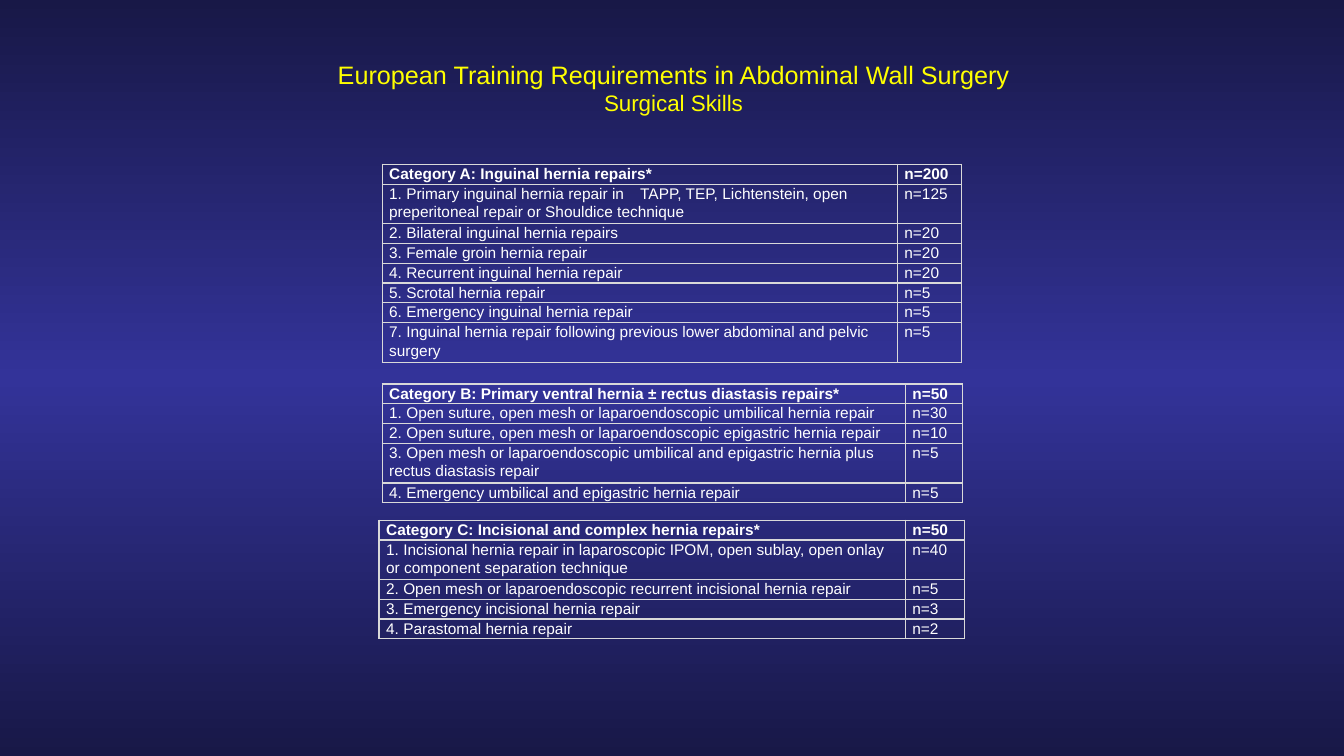
from copy import deepcopy

from lxml import etree
from pptx import Presentation
from pptx import util as u
from pptx.dml.color import RGBColor
from pptx.enum import text
from pptx.oxml import ns

NAVY = RGBColor(0x18, 0x18, 0x47)
INDIGO = RGBColor(0x33, 0x33, 0x99)
YELLOW = RGBColor(0xFF, 0xFF, 0x00)
WHITE = RGBColor(0xFF, 0xFF, 0xFF)
BORDER = RGBColor(0xD9, 0xD9, 0xD9)

FONT = "Arial"
WIDTH, HEIGHT = u.Inches(13.33), u.Inches(7.5)
COL, ROW = WIDTH / 133.3, HEIGHT / 75
LINE_ROWS = 1.95
TECHNIQUE_TAB = 24.9

INGUINAL = [
    ("Category A: Inguinal hernia repairs*", "n=200"),
    ("1. Primary inguinal hernia repair in\tTAPP, TEP, Lichtenstein, open "
     "preperitoneal repair or Shouldice technique", "n=125"),
    ("2. Bilateral inguinal hernia repairs", "n=20"),
    ("3. Female groin hernia repair", "n=20"),
    ("4. Recurrent inguinal hernia repair", "n=20"),
    ("5. Scrotal hernia repair", "n=5"),
    ("6. Emergency inguinal hernia repair", "n=5"),
    ("7. Inguinal hernia repair following previous lower abdominal and pelvic surgery", "n=5"),
]
VENTRAL = [
    ("Category B: Primary ventral hernia ± rectus diastasis repairs*", "n=50"),
    ("1. Open suture, open mesh or laparoendoscopic umbilical hernia repair", "n=30"),
    ("2. Open suture, open mesh or laparoendoscopic epigastric hernia repair", "n=10"),
    ("3. Open mesh or laparoendoscopic umbilical and epigastric hernia plus "
     "rectus diastasis repair", "n=5"),
    ("4. Emergency umbilical and epigastric hernia repair", "n=5"),
]
INCISIONAL = [
    ("Category C: Incisional and complex hernia repairs*", "n=50"),
    ("1. Incisional hernia repair in laparoscopic IPOM, open sublay, open onlay "
     "or component separation technique", "n=40"),
    ("2. Open mesh or laparoendoscopic recurrent incisional hernia repair", "n=5"),
    ("3. Emergency incisional hernia repair", "n=3"),
    ("4. Parastomal hernia repair", "n=2"),
]


def cols(n):
    return u.Emu(round(n * COL))


def rows(n):
    return u.Emu(round(n * ROW))


def style_run(r, size, color, bold=False):
    r.font.name = FONT
    r.font.size = u.Pt(size)
    r.font.color.rgb = color
    r.font.bold = bold


def paint_background(s):
    fill = s.background.fill
    fill.gradient()
    fill.gradient_angle = 270
    first = fill.gradient_stops[0]
    first.color.rgb = NAVY
    first.position = 0
    last = fill.gradient_stops[1]
    last.color.rgb = NAVY
    last.position = 1
    stops = s.background._cSld.find(".//" + ns.qn("a:gsLst"))
    stops.insert(1, deepcopy(stops[0]))
    middle = fill.gradient_stops[1]
    middle.color.rgb = INDIGO
    middle.position = 0.5


def add_title(s):
    tf = s.shapes.add_textbox(cols(11.9), rows(5.4), cols(109.8), rows(6.7)).text_frame
    tf.word_wrap = True
    p = tf.paragraphs[0]
    p.text = "European Training Requirements in Abdominal Wall Surgery\vSurgical Skills"
    p.alignment = text.PP_ALIGN.CENTER
    for r, size in zip(p.runs, (18, 16)):
        style_run(r, size, YELLOW)


def add_borders(cell):
    tcPr = cell._tc.get_or_add_tcPr()
    for i, side in enumerate(("lnL", "lnR", "lnT", "lnB")):
        ln = etree.Element(ns.qn("a:" + side), w=str(u.Pt(1)))
        fill = etree.SubElement(ln, ns.qn("a:solidFill"))
        etree.SubElement(fill, ns.qn("a:srgbClr"), val=str(BORDER))
        tcPr.insert(i, ln)


def add_tab(p, position):
    tabs = etree.SubElement(p._p.get_or_add_pPr(), ns.qn("a:tabLst"))
    etree.SubElement(tabs, ns.qn("a:tab"), pos=str(position), algn="l")


def fill_cell(cell, words, bold):
    cell.fill.background()
    add_borders(cell)
    cell.margin_left = cell.margin_right = cols(0.7)
    cell.margin_top = cell.margin_bottom = 0
    p = cell.text_frame.paragraphs[0]
    p.text = words
    if "\t" in words:
        add_tab(p, cols(TECHNIQUE_TAB))
    p.line_spacing = 1.07
    for r in p.runs:
        style_run(r, 11, WHITE, bold)


def add_category(s, left, top, widths, repairs):
    frame = s.shapes.add_table(len(repairs), len(widths), cols(left), rows(top),
                               cols(sum(widths)), rows(LINE_ROWS * len(repairs)))
    table = frame.table
    table.first_row = table.horz_banding = False
    for column, width in zip(table.columns, widths):
        column.width = cols(width)
    for i, repair in enumerate(repairs):
        table.rows[i].height = rows(LINE_ROWS)
        for j, words in enumerate(repair):
            fill_cell(table.cell(i, j), words, bold=i == 0)


def main():
    prs = Presentation()
    prs.slide_width, prs.slide_height = WIDTH, HEIGHT
    s = prs.slides.add_slide(prs.slide_layouts[6])
    paint_background(s)
    add_title(s)
    add_category(s, 37.9, 16.3, (51.1, 6.4), INGUINAL)
    add_category(s, 37.9, 38.1, (51.9, 5.7), VENTRAL)
    add_category(s, 37.6, 51.6, (52.2, 5.9), INCISIONAL)
    prs.save("out.pptx")


if __name__ == "__main__":
    main()
